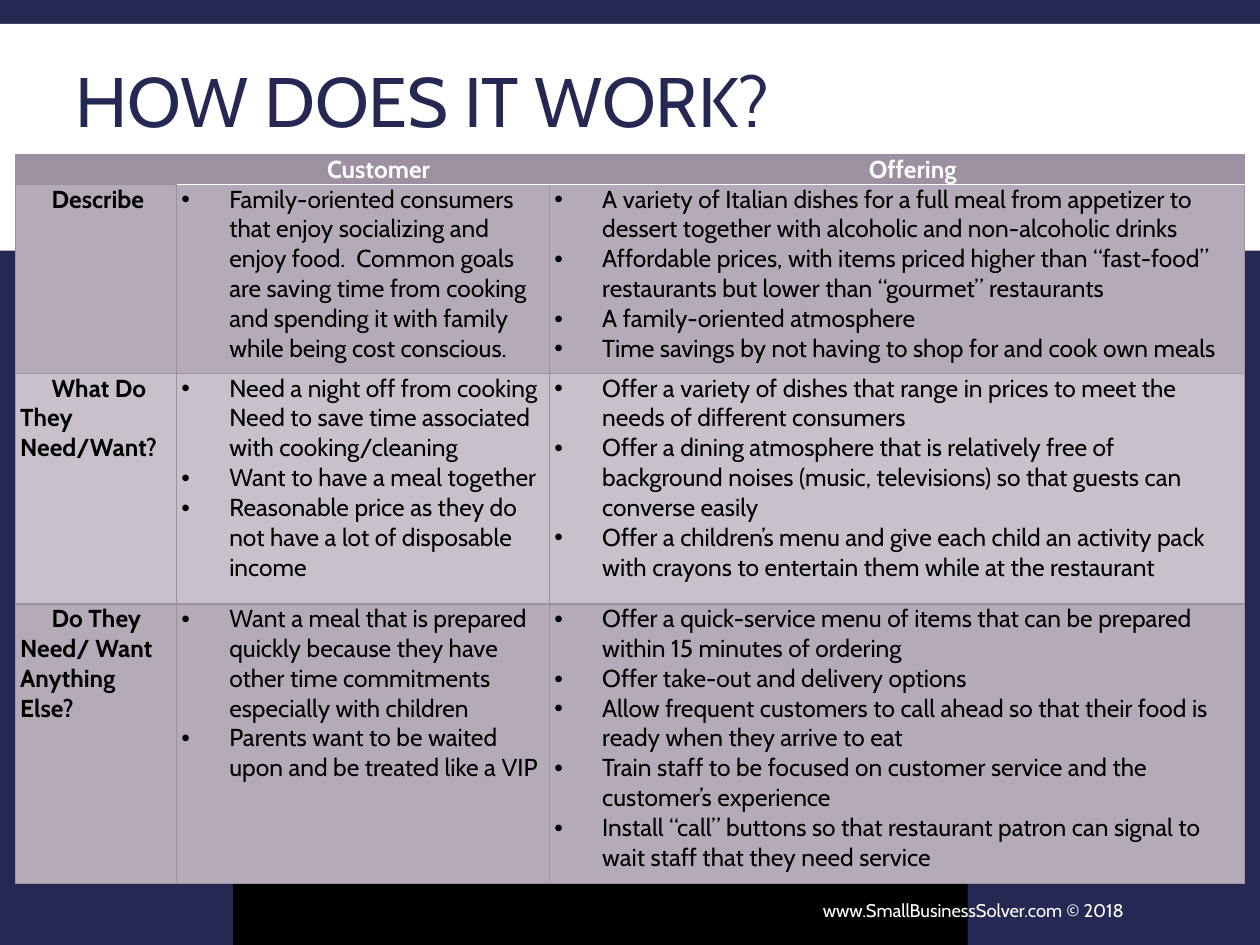
"""Build the "How does it work?" slide with its customer and offering table."""
from lxml.etree import SubElement
from pptx import Presentation
from pptx.dml.color import RGBColor
from pptx.enum.shapes import MSO_SHAPE
from pptx.enum.text import MSO_ANCHOR, PP_ALIGN
from pptx.oxml import parse_xml
from pptx.oxml.ns import nsdecls, qn
from pptx.util import Inches, Pt

NAVY = RGBColor(0x24, 0x28, 0x52)
WHITE = RGBColor(0xFF, 0xFF, 0xFF)
BLACK = RGBColor(0x00, 0x00, 0x00)
MAUVE = RGBColor(0x9D, 0x90, 0xA0)
MID_MAUVE = RGBColor(0xB5, 0xAB, 0xB8)
PALE_MAUVE = RGBColor(0xC8, 0xC1, 0xCC)

COLUMN_WIDTHS = [1.28, 2.96, 5.52]
ROW_HEIGHTS = [0.2, 1.5, 1.83, 2.22]
ROW_FILLS = [MAUVE, MID_MAUVE, PALE_MAUVE, MID_MAUVE]
ROWS = [
    [[""], ["Customer"], ["Offering"]],
    [
        ["Describe"],
        ["Family-oriented consumers that enjoy socializing and enjoy food.  Common goals are saving time "
         "from cooking and spending it with family while being cost conscious."],
        ["A variety of Italian dishes for a full meal from appetizer to dessert together with alcoholic "
         "and non-alcoholic drinks",
         "Affordable prices, with items priced higher than “fast-food” restaurants but lower than "
         "“gourmet” restaurants",
         "A family-oriented atmosphere",
         "Time savings by not having to shop for and cook own meals"],
    ],
    [
        ["What Do They Need/Want?"],
        ["Need a night off from cooking Need to save time associated with cooking/cleaning",
         "Want to have a meal together",
         "Reasonable price as they do not have a lot of disposable income"],
        ["Offer a variety of dishes that range in prices to meet the needs of different consumers",
         "Offer a dining atmosphere that is relatively free of background noises (music, televisions) "
         "so that guests can converse easily",
         "Offer a children’s menu and give each child an activity pack with crayons to entertain them "
         "while at the restaurant"],
    ],
    [
        ["Do They Need/ Want Anything Else?"],
        ["Want a meal that is prepared quickly because they have other time commitments especially "
         "with children",
         "Parents want to be waited upon and be treated like a VIP"],
        ["Offer a quick-service menu of items that can be prepared within 15 minutes of ordering",
         "Offer take-out and delivery options",
         "Allow frequent customers to call ahead so that their food is ready when they arrive to eat",
         "Train staff to be focused on customer service and the customer’s experience",
         "Install “call” buttons so that restaurant patron can signal to wait staff that they need service"],
    ],
]


def write(para, text, size=14, color=BLACK, bold=False, align=PP_ALIGN.LEFT, margin=0, indent=0, bullet=None):
    para.alignment = align
    properties = para._p.get_or_add_pPr()
    properties.set("marL", str(Inches(margin)))
    properties.set("indent", str(Inches(indent)))
    if bullet:
        SubElement(properties, qn("a:buFont"), typeface="Arial")
        SubElement(properties, qn("a:buChar"), char=bullet)
    if not text:
        SubElement(para._p, qn("a:endParaRPr"), sz=str(size * 100))
        return
    span = para.add_run()
    span.text = text
    span.font.name = "Cabin"
    span.font.size = Pt(size)
    span.font.bold = bold
    span.font.color.rgb = color


def draw_border(cell, position, side, color, width):
    line = parse_xml(
        f'<a:{side} {nsdecls("a")} w="{Pt(width)}"><a:solidFill>'
        f'<a:srgbClr val="{color}"/></a:solidFill></a:{side}>'
    )
    cell._tc.get_or_add_tcPr().insert(position, line)


deck = Presentation()
deck.slide_width, deck.slide_height = Inches(10), Inches(7.5)
page = deck.slides.add_slide(deck.slide_layouts[6])
page.background.fill.solid()
page.background.fill.fore_color.rgb = NAVY

for place, color in [((0, 0.19, 10, 1.8), WHITE), ((1.85, 5.88, 5.83, 1.62), BLACK)]:
    panel = page.shapes.add_shape(MSO_SHAPE.RECTANGLE, *map(Inches, place))
    panel.shadow.inherit = False
    panel.fill.solid()
    panel.fill.fore_color.rgb = color
    panel.line.fill.background()

for place, text, style, spacing in [
    ((0.5, 0.22, 9, 1.25), "HOW DOES IT WORK?", {"size": 40, "color": NAVY}, 0.85),
    ((4.58, 7.02, 4.44, 0.4), "www.SmallBusinessSolver.com © 2018",
     {"size": 10.5, "color": WHITE, "align": PP_ALIGN.RIGHT}, 1.0),
]:
    box = page.shapes.add_textbox(*map(Inches, place))
    box.text_frame.word_wrap = True
    box.text_frame.vertical_anchor = MSO_ANCHOR.MIDDLE
    box.text_frame.paragraphs[0].line_spacing = spacing
    write(box.text_frame.paragraphs[0], text, **style)

table = page.shapes.add_table(
    len(ROWS), len(COLUMN_WIDTHS), Inches(0.12), Inches(1.23),
    Inches(sum(COLUMN_WIDTHS)), Inches(sum(ROW_HEIGHTS)),
).table
for column, width in zip(table.columns, COLUMN_WIDTHS):
    column.width = Inches(width)
for row, height in zip(table.rows, ROW_HEIGHTS):
    row.height = Inches(height)

for row_number, row_texts in enumerate(ROWS):
    for column_number, texts in enumerate(row_texts):
        cell = table.cell(row_number, column_number)
        cell.margin_left = cell.margin_right = Inches(0.04)
        cell.margin_top = cell.margin_bottom = 0
        cell.fill.solid()
        cell.fill.fore_color.rgb = ROW_FILLS[row_number]
        if row_number == 0:
            style = {"color": WHITE, "bold": True, "align": PP_ALIGN.CENTER, "indent": 0.25}
        elif column_number == 0:
            style = {"bold": True, "indent": 0.25}
        else:
            style = {"margin": 0.38, "indent": -0.38, "bullet": "•"}
        for number, text in enumerate(texts):
            para = cell.text_frame.add_paragraph() if number else cell.text_frame.paragraphs[0]
            write(para, text, **style)
        for position, side in enumerate(["lnL", "lnR", "lnT", "lnB"]):
            under_header = (row_number, side) in [(0, "lnB"), (1, "lnT")] and column_number > 0
            beside_labels = row_number > 0 and (column_number, side) in [(0, "lnR"), (1, "lnL")]
            draw_border(cell, position, side, WHITE if under_header else MAUVE,
                        1 if under_header or beside_labels else 0.75)

deck.save("out.pptx")
